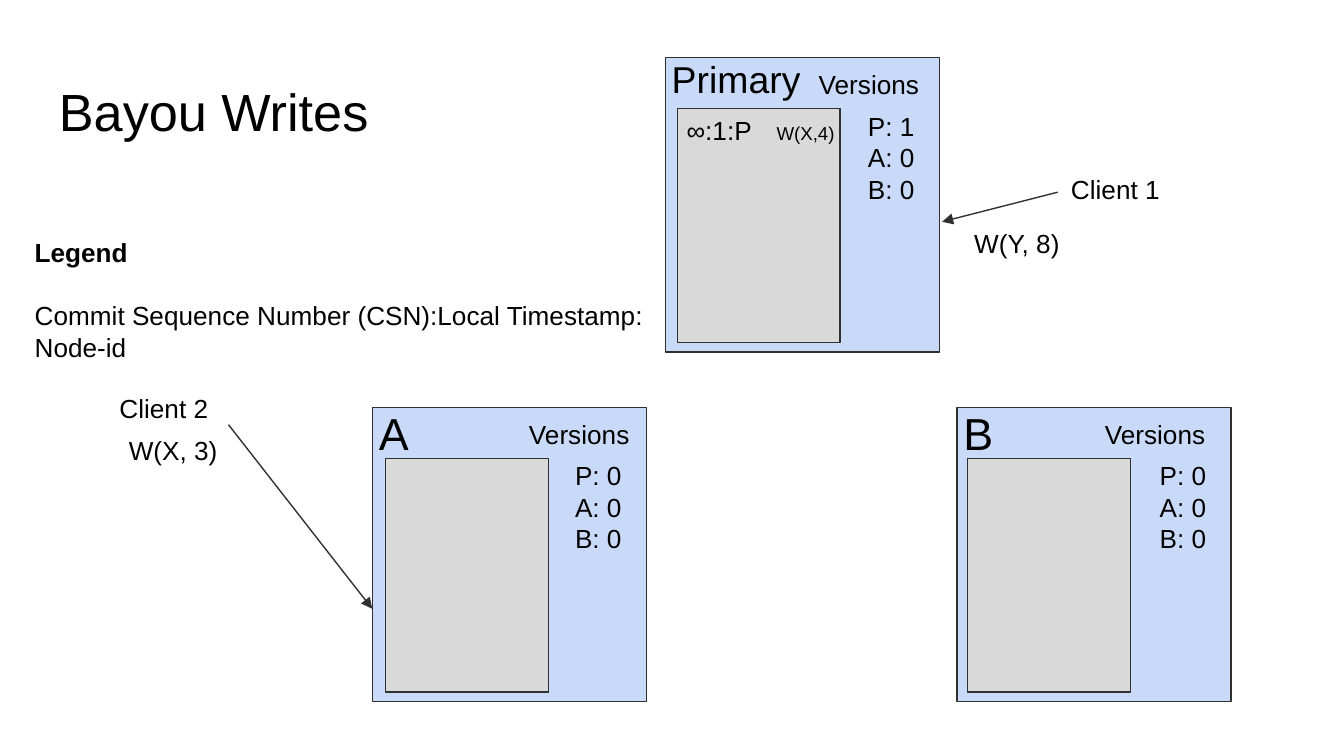
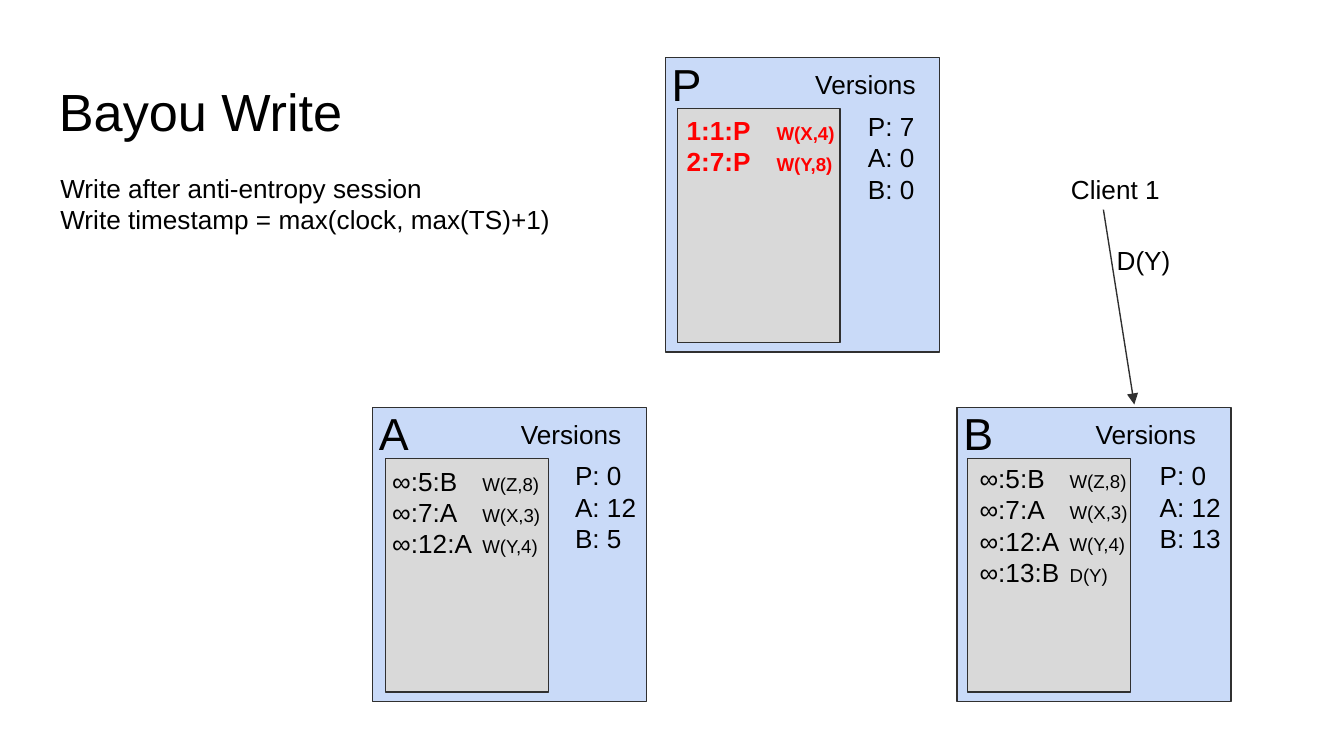
from dataclasses import dataclass

from pptx import Presentation
from pptx.dml.color import RGBColor
from pptx.enum.shapes import MSO_CONNECTOR, MSO_SHAPE
from pptx.enum.text import MSO_ANCHOR, PP_ALIGN
from pptx.oxml.ns import qn
from pptx.util import Inches, Pt
from lxml.etree import SubElement


@dataclass(frozen=True)
class Theme:
    """Colours, type sizes and the grid that both slides share."""
    font: str = "Arial"
    ink: str = "000000"
    alert: str = "FF0000"
    panel: str = "C9DAF8"
    log: str = "D9D9D9"
    edge: str = "303030"
    title: int = 28
    letter: int = 24
    name: int = 20
    body: int = 14
    small: int = 10
    stroke: float = 0.75
    tab: float = 6.7
    cols: int = 100


THEME = Theme()
WIDTH, HEIGHT = Inches(10), Inches(5.625)
FRAME = {"word_wrap": True, "vertical_anchor": MSO_ANCHOR.TOP,
         **{f"margin_{side}": Inches(0.1)
            for side in ("left", "right", "top", "bottom")}}

NODES = {"P": (49.5, 4.3, 0.9), "A": (27.7, 30.3, 1), "B": (71.2, 30.3, 0.8)}


def grid(*counts):
    """Turn counts of square grid cells into lengths."""
    return [round(WIDTH * count / THEME.cols) for count in counts]


def apply(item, values):
    """Set every attribute named in a dict."""
    for key, value in values.items():
        setattr(item, key, value)


def ink(run, size, color=THEME.ink, bold=False):
    """Format one run."""
    apply(run.font, {"size": Pt(size), "name": THEME.font, "bold": bold})
    run.font.color.rgb = RGBColor.from_string(color)


def write(shapes, place, lines, size=THEME.body, align=PP_ALIGN.LEFT):
    """Add a text box with one paragraph per line."""
    frame = shapes.add_textbox(*grid(*place)).text_frame
    apply(frame, FRAME)
    for index, line in enumerate(lines):
        para = frame.paragraphs[0] if index == 0 else frame.add_paragraph()
        para.alignment = align
        run = para.add_run()
        run.text = line
        ink(run, size)
    return frame


def block(shapes, place, color):
    """Add an outlined rectangle."""
    shape = shapes.add_shape(MSO_SHAPE.RECTANGLE, *grid(*place))
    shape.shadow.inherit = False
    shape.fill.solid()
    shape.fill.fore_color.rgb = RGBColor.from_string(color)
    shape.line.color.rgb = RGBColor.from_string(THEME.edge)
    shape.line.width = Pt(THEME.stroke)


def arrow(slide, start, end):
    """Add a straight line with a head at its end."""
    line = slide.shapes.add_connector(MSO_CONNECTOR.STRAIGHT, *grid(*start, *end))
    line.line.color.rgb = RGBColor.from_string(THEME.edge)
    line.line.width = Pt(THEME.stroke)
    SubElement(line.line._get_or_add_ln(), qn("a:tailEnd"), type="triangle")
    SubElement(line._element.spPr, qn("a:effectLst"))


def node(slide, key, counts, span, name=None):
    """Add a server with its log area, name and version vector."""
    left, top, inset = NODES[key]
    shapes = slide.shapes.add_group_shape().shapes
    block(shapes, (left, top, 20.4, 21.9), THEME.panel)
    block(shapes, (left + inset, top + 3.8, 12.1, 17.4), THEME.log)
    vector = [f"{peer}: {count}" for peer, count in zip(NODES, counts)]
    write(shapes, (left + 14.1, top + 2.9, 7.2, 8.6), vector)
    write(shapes, (left + 20.6 - span, top - 0.2, span, 3.6), ["Versions"],
          align=PP_ALIGN.CENTER)
    write(shapes, (left - 0.5, top - 1.1, 12.4, 5.3), [name or key],
          THEME.name if name else THEME.letter)


def log(slide, key, shift, writes, color=THEME.ink, bold=False):
    """List a server's writes, each stamp followed by a tabbed command."""
    left, top, _ = NODES[key]
    place = left + shift[0], top + shift[1], 13.8, 15.5
    frame = write(slide.shapes, place, [stamp for stamp, _ in writes])
    for para, (_, command) in zip(frame.paragraphs, writes):
        ink(para.runs[0], THEME.body, color, bold)
        run = para.add_run()
        run.text = "\t" + command
        ink(run, THEME.small, color, bold)
        stops = SubElement(para._p.get_or_add_pPr(), qn("a:tabLst"))
        SubElement(stops, qn("a:tab"), pos=str(grid(THEME.tab)[0]), algn="l")


def client(slide, name, spot, command, target):
    """Label a client and the command that it sends."""
    write(slide.shapes, (*spot, 9.2, 4.2), [name])
    write(slide.shapes, (*target, 13.8, 6.5), [command])


def start(deck, title):
    """Add a blank slide with a title."""
    slide = deck.slides.add_slide(deck.slide_layouts[6])
    write(slide.shapes, (3.4, 4.9, 36.1, 6.3), [title], THEME.title)
    return slide


def first(deck):
    """Build the slide of the initial writes."""
    slide = start(deck, "Bayou Writes")
    node(slide, "P", (1, 0, 0), 10.9, "Primary")
    node(slide, "A", (0, 0, 0), 10.4)
    node(slide, "B", (0, 0, 0), 11.7)
    log(slide, "P", (0.6, 3.2), [("∞:1:P", "W(X,4)")])
    client(slide, "Client 1", (78.7, 11.9), "W(Y, 8)", (71.5, 15.9))
    arrow(slide, (78.7, 14.3), (70.1, 16.5))
    client(slide, "Client 2", (7.9, 28.2), "W(X, 3)", (8.6, 31.3))
    arrow(slide, (17, 31.6), (27.7, 45.3))
    legend = write(slide.shapes, (1.6, 16.6, 47.4, 11.6), [
        "Legend", "Commit Sequence Number (CSN):Local Timestamp: Node-id"])
    head, text = legend.paragraphs
    head.runs[0].font.bold = True
    text.space_before = Pt(17)


def second(deck):
    """Build the slide of the write after anti-entropy."""
    slide = start(deck, "Bayou Write")
    node(slide, "P", (7, 0, 0), 11.4)
    node(slide, "A", (0, 12, 5), 11.6)
    node(slide, "B", (0, 12, 13), 13.1)
    write(slide.shapes, (3.5, 11.8, 38.5, 7.2), [
        "Write after anti-entropy session",
        "Write timestamp = max(clock, max(TS)+1)"])
    shared = [("∞:5:B", "W(Z,8)"), ("∞:7:A", "W(X,3)"), ("∞:12:A", "W(Y,4)")]
    log(slide, "P", (0.6, 3.2), [("1:1:P", "W(X,4)"), ("2:7:P", "W(Y,8)")],
        THEME.alert, True)
    log(slide, "A", (0.5, 3.3), shared)
    log(slide, "B", (0.7, 3.1), shared + [("∞:13:B", "D(Y)")])
    client(slide, "Client 1", (78.7, 11.9), "D(Y)", (82.1, 17.2))
    arrow(slide, (82.1, 15.6), (84.4, 30.1))


def main():
    """Build and save the deck."""
    deck = Presentation()
    apply(deck, {"slide_width": WIDTH, "slide_height": HEIGHT})
    first(deck)
    second(deck)
    deck.save("out.pptx")


if __name__ == "__main__":
    main()
